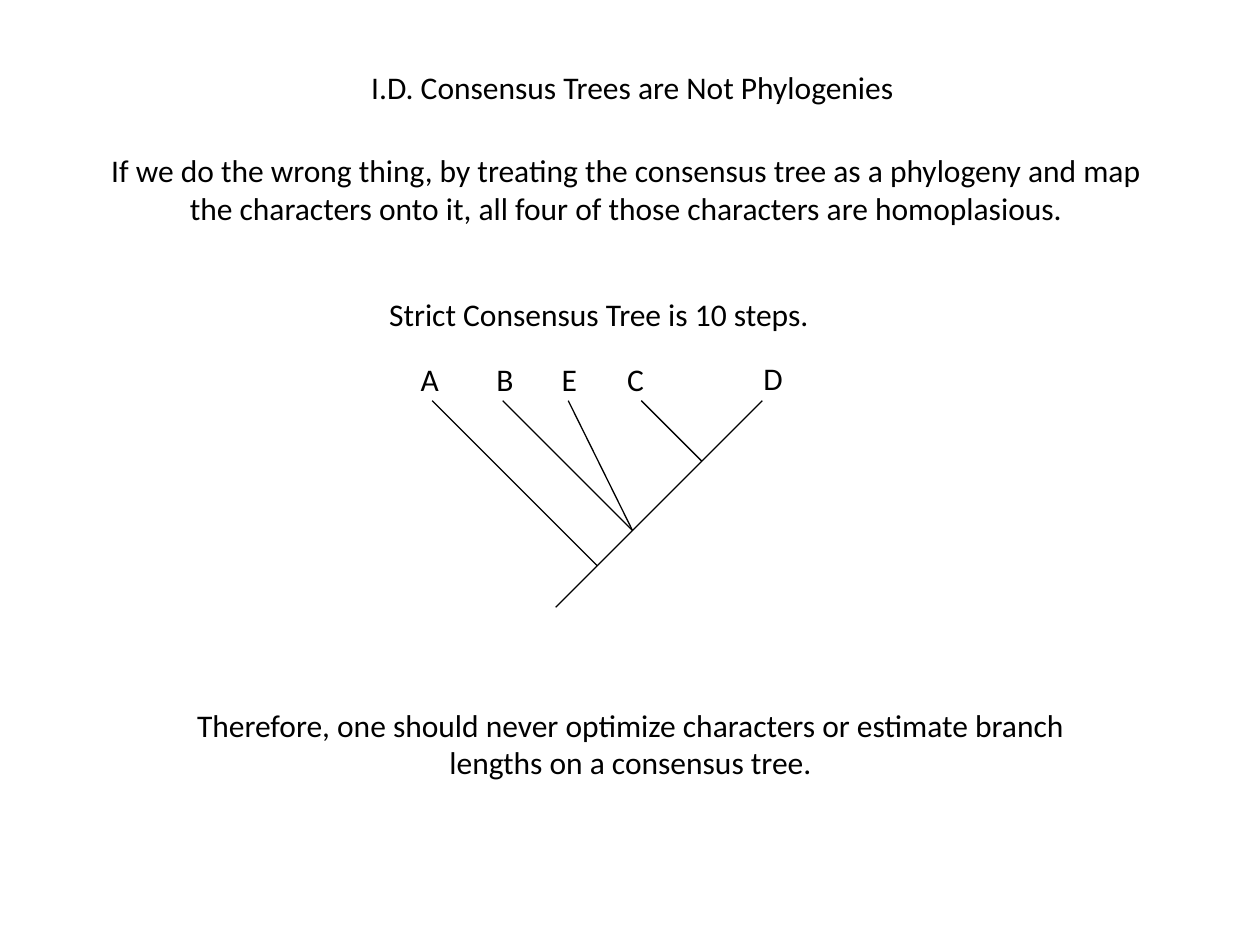
from pptx import Presentation
from pptx.dml.color import RGBColor
from pptx.enum.shapes import MSO_CONNECTOR
from pptx.enum.text import MSO_ANCHOR, MSO_AUTO_SIZE, PP_ALIGN
from pptx.oxml import parse_xml
from pptx.oxml.ns import nsdecls
from pptx.util import Inches, Pt

STRAIGHT = MSO_CONNECTOR.STRAIGHT
LEFT, CENTER = PP_ALIGN.LEFT, PP_ALIGN.CENTER
TITLE_ONLY = 5

# Content: text, box (left, top, width, height) in inches
TITLE = ("I.D. Consensus Trees are Not Phylogenies", (2.82, 0.49, 4.4, 0.4))
STATEMENTS = [
    ("If we do the wrong thing, by treating the consensus tree as a phylogeny "
     "and map the characters onto it, all four of those characters are "
     "homoplasious.", (0.69, 1.15, 8.56, 0.71)),
    ("Therefore, one should never optimize characters or estimate branch "
     "lengths on a consensus tree.", (1.19, 5.55, 7.63, 0.71)),
]
TREE_CAPTION = ("Strict Consensus Tree is 10 steps.", (2.99, 2.29, 3.57, 0.4))

# Taxa: tip x, taxon whose node the branch joins, label box
TAXA = {
    "A": (3.43, "A", (3.24, 2.81, 0.35, 0.4)),
    "B": (3.99, "B", (3.84, 2.81, 0.35, 0.4)),
    "E": (4.51, "B", (4.36, 2.81, 0.32, 0.4)),
    "C": (5.09, "C", (4.88, 2.81, 0.34, 0.4)),
    "D": (6.05, None, (5.96, 2.8, 0.36, 0.4)),
}
STEM_TAXON = "D"
TIP_Y, ROOT_Y = 3.18, 4.82

THEME = {
    "font": {"name": "Calibri", "size": Pt(18), "bold": False},
    "ink": RGBColor(0, 0, 0),
    "line_width": Pt(0.75),
}


def write(shape, text, align, wrap):
    frame = shape.text_frame
    frame.text = text
    frame_format = {"word_wrap": wrap, "vertical_anchor": MSO_ANCHOR.TOP,
                    "auto_size": MSO_AUTO_SIZE.SHAPE_TO_FIT_TEXT}
    for name, value in frame_format.items():
        setattr(frame, name, value)
    paragraph = frame.paragraphs[0]
    paragraph.alignment = align
    font = paragraph.runs[0].font
    for name, value in THEME["font"].items():
        setattr(font, name, value)
    font.color.rgb = THEME["ink"]


def add_text(shapes, text, box, align=LEFT, wrap=False):
    write(shapes.add_textbox(*map(Inches, box)), text, align, wrap)


def add_branch(shapes, start, end):
    branch = shapes.add_connector(STRAIGHT, *map(Inches, start + end))
    branch.line.color.rgb = THEME["ink"]
    branch.line.width = THEME["line_width"]
    branch._element.spPr.append(parse_xml(f"<a:effectLst {nsdecls('a')}/>"))


def node_on_stem(taxon):
    """Point where a 45-degree branch from the taxon's tip meets the stem."""
    run = (TAXA[STEM_TAXON][0] - TAXA[taxon][0]) / 2
    return TAXA[taxon][0] + run, TIP_Y + run


def main():
    deck = Presentation()
    deck.slide_width, deck.slide_height = Inches(10), Inches(7.5)
    slide = deck.slides.add_slide(deck.slide_layouts[TITLE_ONLY])

    # Title
    heading, heading_box = TITLE
    title = slide.shapes.title
    for name, value in zip(("left", "top", "width", "height"), heading_box):
        setattr(title, name, Inches(value))
    write(title, heading, CENTER, False)

    # Statements above and below the tree
    for statement, box in STATEMENTS:
        add_text(slide.shapes, statement, box, CENTER, True)

    # Tree: stem, side branches and labels
    tree = slide.shapes.add_group_shape().shapes
    stem_x = TAXA[STEM_TAXON][0]
    root = (stem_x - (ROOT_Y - TIP_Y), ROOT_Y)
    for taxon, (tip_x, joins, label_box) in TAXA.items():
        end = node_on_stem(joins) if joins else root
        add_branch(tree, (tip_x, TIP_Y), end)
        add_text(tree, taxon, label_box)
    add_text(tree, *TREE_CAPTION)

    deck.save("out.pptx")


if __name__ == "__main__":
    main()
